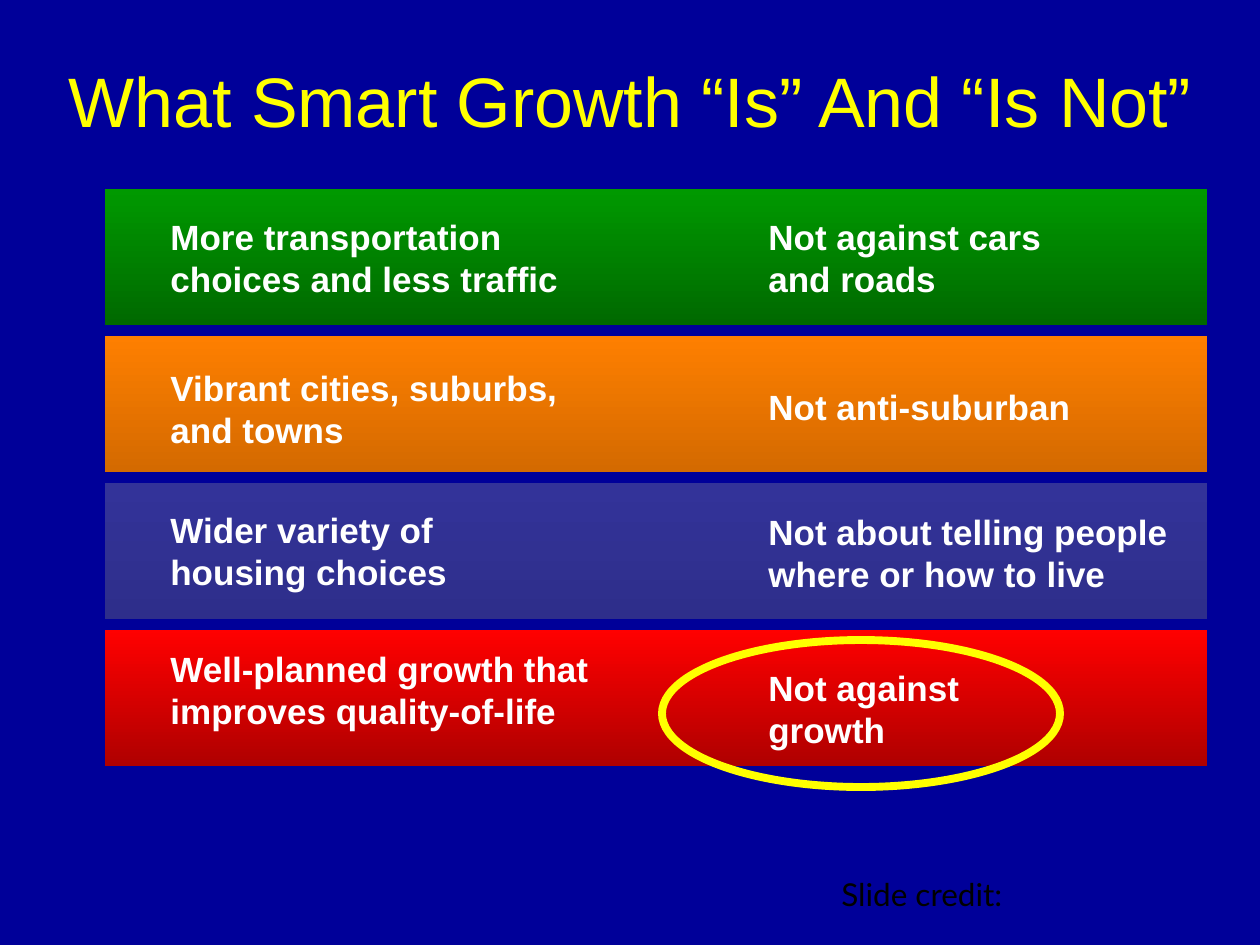
from dataclasses import dataclass

from pptx import Presentation
from pptx.dml.color import RGBColor as RGB
from pptx.enum.shapes import MSO_SHAPE as SHAPE
from pptx.enum.text import MSO_ANCHOR as ANCHOR, PP_ALIGN as ALIGN
from pptx.util import Emu, Pt

PX = 914400 / 126


def px(*nums):
    """Turn px lengths into EMU."""
    return [Emu(round(n * PX)) for n in nums]


@dataclass(frozen=True)
class Theme:
    back: str = "000099"
    accent: str = "FFFF00"
    light: str = "FFFFFF"
    dark: str = "000000"
    green: tuple = ("009900", "006900")
    orange: tuple = ("FE7F00", "D46A00")
    blue: tuple = ("333399", "2E2E8B")
    red: tuple = ("FF0000", "AF0000")
    font: str = "Arial"
    small: str = "Lato"
    title: int = 40
    body: int = 20
    note: int = 18
    ring: float = 4.5


class Deck:
    def __init__(self, theme):
        self.theme = theme
        self.prs = Presentation()
        self.prs.slide_width, self.prs.slide_height = px(1260, 945)
        self.slide = self.prs.slides.add_slide(self.prs.slide_layouts[6])
        fill = self.slide.background.fill
        fill.solid()
        fill.fore_color.rgb = RGB.from_string(theme.back)

    def bar(self, box, tones):
        """Add a rectangle that shades from the first tone down to the second."""
        bar = self.slide.shapes.add_shape(SHAPE.RECTANGLE, *px(*box))
        bar.shadow.inherit = False
        bar.line.fill.background()
        bar.fill.gradient()
        bar.fill.gradient_angle = 270
        for stop, tone in zip(bar.fill.gradient_stops, tones):
            stop.color.rgb = RGB.from_string(tone)

    def text(self, box, words, size, color, font, bold=False,
             align=ALIGN.LEFT, anchor=ANCHOR.TOP):
        frame = self.slide.shapes.add_textbox(*px(*box)).text_frame
        frame.word_wrap = True
        frame.vertical_anchor = anchor
        para = frame.paragraphs[0]
        para.text = words
        para.alignment = align
        para.font.name = font
        para.font.size = Pt(size)
        para.font.bold = bold
        para.font.color.rgb = RGB.from_string(color)

    def ring(self, box):
        ring = self.slide.shapes.add_shape(SHAPE.OVAL, *px(*box))
        ring.shadow.inherit = False
        ring.fill.background()
        ring.line.color.rgb = RGB.from_string(self.theme.accent)
        ring.line.width = Pt(self.theme.ring)


def main():
    look = Theme()
    deck = Deck(look)
    deck.text((0, 42, 1260, 116), "What Smart Growth “Is” And “Is Not”",
              look.title, look.accent, look.font,
              align=ALIGN.CENTER, anchor=ANCHOR.MIDDLE)

    # Each side holds its words, top, width and height
    rows = [
        (look.green,
         ("More transportation choices and less traffic", 209, 462, 97),
         ("Not against cars and roads", 209, 328, 97)),
        (look.orange,
         ("Vibrant cities, suburbs, and towns", 360, 462, 97),
         ("Not anti-suburban", 379, 328, 54)),
        (look.blue,
         ("Wider variety of housing choices", 502, 328, 97),
         ("Not about telling people where or how to live", 504, 431, 97)),
        (look.red,
         ("Well-planned growth that improves quality-of-life", 641, 462, 97),
         ("Not against growth", 660, 328, 97)),
    ]
    for i, (tones, *sides) in enumerate(rows):
        deck.bar((105, 189 + 147 * i, 1102, 136), tones)
        for left, (words, top, wide, high) in zip((158, 756), sides):
            deck.text((left, top, wide, high), words,
                      look.body, look.light, look.font, bold=True)

    deck.ring((662, 640, 398, 147))
    deck.text((829, 869, 210, 50), "Slide credit:",
              look.note, look.dark, look.small)
    deck.prs.save("out.pptx")


if __name__ == "__main__":
    main()
